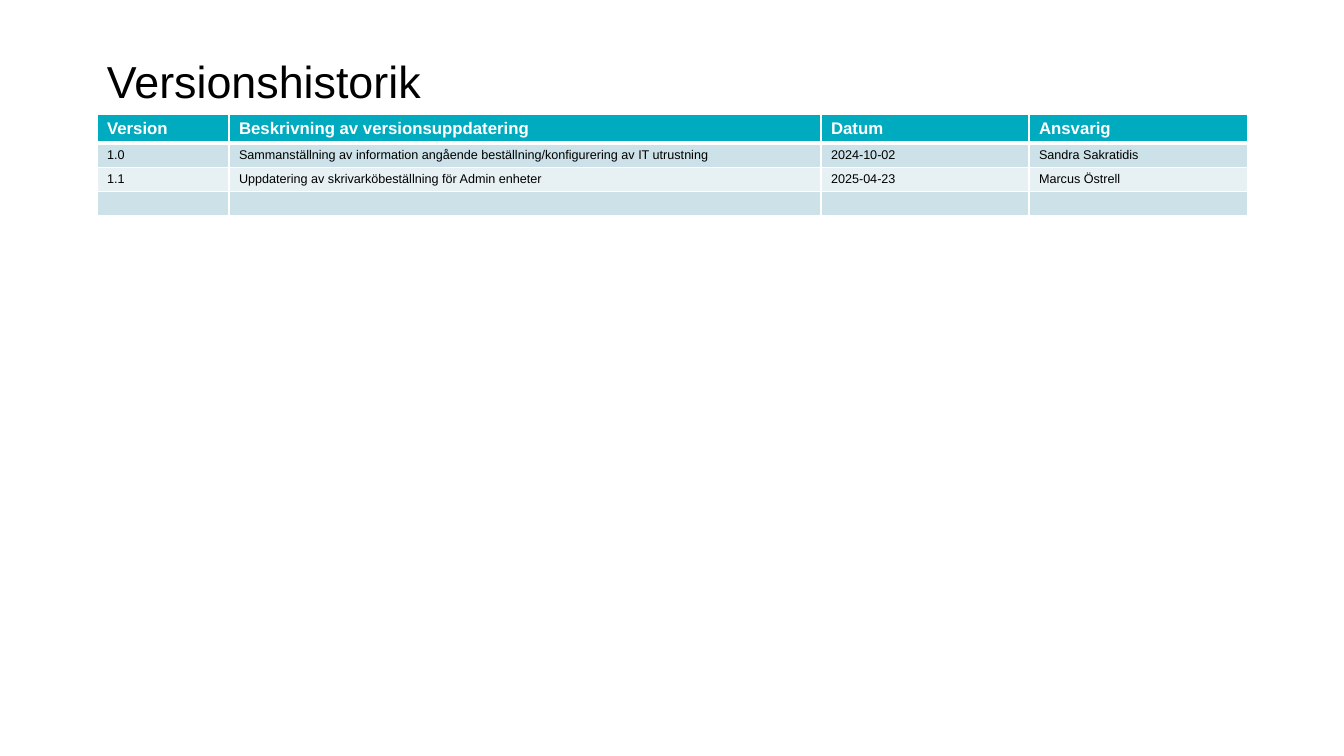
import pptx
import pptx.dml.color
import pptx.enum.text
import pptx.oxml
import pptx.oxml.ns
import pptx.util
from lxml import etree


def px(n):
    return pptx.util.Emu(round(n * 914400 / 100.8))


def color(value):
    return pptx.dml.color.RGBColor.from_string(value)


prs = pptx.Presentation()
prs.slide_width, prs.slide_height = px(1344), px(756)
s = prs.slides.add_slide(prs.slide_layouts[5])

title = s.shapes.title
title.left, title.top, title.width, title.height = px(97), px(43), px(1151), px(47)
tf = title.text_frame
tf.text = "Versionshistorik"
tf.word_wrap = True
tf.auto_size = pptx.enum.text.MSO_AUTO_SIZE.NONE
tf.vertical_anchor = pptx.enum.text.MSO_ANCHOR.TOP
tf.margin_left, tf.margin_top, tf.margin_bottom = px(10), px(11), 0
p = tf.paragraphs[0]
p.alignment = pptx.enum.text.PP_ALIGN.LEFT
p.line_spacing = 1.0
p.font.name, p.font.size = "Arial", pptx.util.Pt(32)
p.font.color.rgb = color("000000")

rows = [
    ["Version", "Beskrivning av versionsuppdatering", "Datum", "Ansvarig"],
    ["1.0", "Sammanställning av information angående beställning/konfigurering av IT utrustning",
     "2024-10-02", "Sandra Sakratidis"],
    ["1.1", "Uppdatering av skrivarköbeställning för Admin enheter",
     "2025-04-23", "Marcus Östrell"],
    ["", "", "", ""],
]
col_widths = [132, 592, 208, 219]
row_heights = [29, 24, 24, 24]
row_fills = ["00ABC0", "CCE2E8", "E7F1F4", "CCE2E8"]

table = s.shapes.add_table(len(rows), len(col_widths), px(97), px(114),
                           px(sum(col_widths)), px(sum(row_heights))).table
for column, width in zip(table.columns, col_widths):
    column.width = px(width)

for i, texts in enumerate(rows):
    table.rows[i].height = px(row_heights[i])
    header = i == 0
    size = 12 if header else 9
    for j, text in enumerate(texts):
        cell = table.cell(i, j)
        cell.fill.solid()
        cell.fill.fore_color.rgb = color(row_fills[i])
        if not header and j in (0, 2):
            cell.vertical_anchor = pptx.enum.text.MSO_ANCHOR.MIDDLE
        p = cell.text_frame.paragraphs[0]
        if text:
            p.text = text
        else:
            end = etree.SubElement(p._p, pptx.oxml.ns.qn("a:endParaRPr"))
            end.set("sz", str(size * 100))
        p.font.name, p.font.size, p.font.bold = "Arial", pptx.util.Pt(size), header
        p.font.color.rgb = color("FFFFFF" if header else "000000")

        tc_pr = cell._tc.get_or_add_tcPr()
        for k, side in enumerate(["lnL", "lnR", "lnT", "lnB"]):
            thick = (header and side == "lnB") or (i == 1 and side == "lnT")
            tc_pr.insert(k, pptx.oxml.parse_xml(
                f'<a:{side} {pptx.oxml.ns.nsdecls("a")} w="{pptx.util.Pt(3 if thick else 1)}">'
                f'<a:solidFill><a:srgbClr val="FFFFFF"/></a:solidFill></a:{side}>'))

prs.save("out.pptx")
